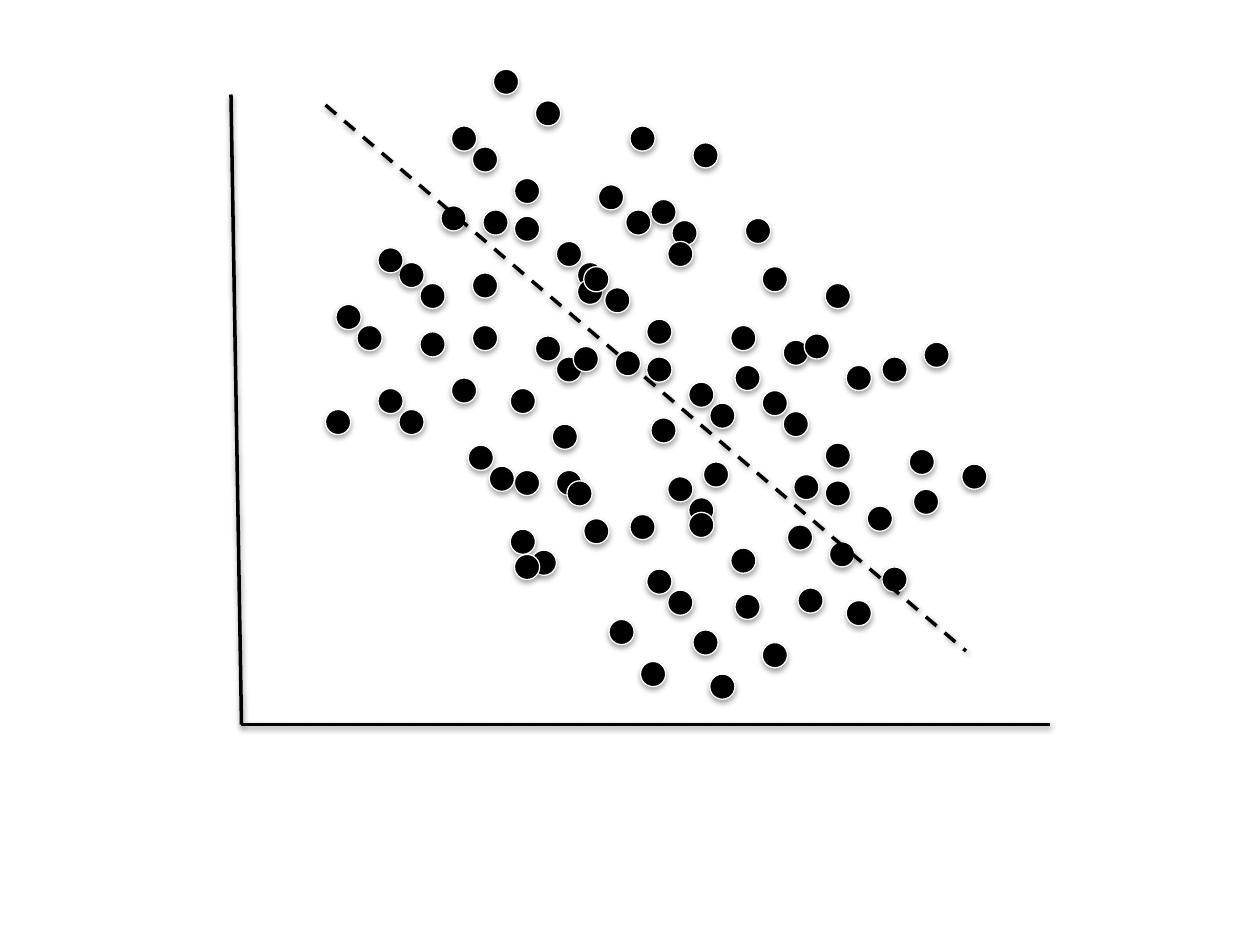
from lxml.etree import SubElement
from pptx import Presentation
from pptx.dml.color import RGBColor
from pptx.enum.dml import MSO_LINE_DASH_STYLE as Dash
from pptx.enum.shapes import MSO_CONNECTOR as Connector, MSO_SHAPE as Shape
from pptx.oxml.ns import qn
from pptx.util import Pt

# Content: lines in points, dots as left and top in grid steps
AXES = [((132, 54), (138, 414)), ((600, 414), (138, 414))]
TREND = ((186, 60), (552, 372))
GRID = 1.2  # points per step
DOT = 12 * GRID
DOTS = [
    (215, 60), (225, 130), (230, 100), (160, 145), (255, 160), (180, 185),
    (265, 115), (215, 180), (190, 125), (310, 95), (225, 70), (225, 155),
    (245, 85), (170, 155), (265, 170), (190, 195), (275, 125), (155, 195),
    (200, 135), (320, 105), (235, 33), (245, 103), (255, 48), (180, 118),
    (275, 133), (200, 158), (285, 88), (300, 60), (210, 98), (330, 68),
    (278, 127), (310, 199), (293, 167), (223, 212), (318, 227), (243, 252),
    (328, 182), (278, 247), (245, 224), (373, 162), (288, 137), (265, 224),
    (308, 152), (233, 222), (328, 237), (253, 262), (338, 192), (245, 264),
    (263, 202), (355, 104), (298, 100), (308, 170), (318, 115), (243, 185),
    (350, 174), (270, 229), (348, 155), (363, 127), (273, 165), (393, 135),
    (363, 186), (395, 258), (378, 226), (308, 271), (403, 286), (305, 315),
    (413, 241), (363, 306), (330, 300), (458, 221), (373, 196), (350, 283),
    (393, 211), (318, 281), (420, 270), (338, 321), (335, 220), (290, 295),
    (348, 261), (440, 163), (383, 159), (393, 229), (403, 174), (328, 244),
    (435, 233), (300, 245), (433, 214), (420, 170), (375, 250), (380, 280),
]
BLACK, WHITE = "000000", "FFFFFF"


def color(code):
    return RGBColor.from_string(code)


def add_shadow(item, distance, opacity):
    """Add a soft black shadow straight below a shape or line."""
    effects = SubElement(item._element.spPr, qn("a:effectLst"))
    shadow = SubElement(effects, qn("a:outerShdw"), blurRad=str(Pt(3.15)),
                        dist=str(Pt(distance)), dir="5400000", rotWithShape="0")
    black = SubElement(shadow, qn("a:srgbClr"), val=BLACK)
    SubElement(black, qn("a:alpha"), val=str(opacity * 1000))


def add_line(shapes, start, end, dash=None):
    line = shapes.add_connector(
        Connector.STRAIGHT, *(Pt(value) for value in start + end))
    line.line.color.rgb = color(BLACK)
    line.line.width = Pt(2)
    if dash:
        line.line.dash_style = dash
    add_shadow(line, 1.57, 38)


def add_dot(shapes, column, row):
    dot = shapes.add_shape(
        Shape.OVAL, Pt(column * GRID), Pt(row * GRID), Pt(DOT), Pt(DOT))
    dot.fill.solid()
    dot.fill.fore_color.rgb = color(BLACK)
    dot.line.color.rgb = color(WHITE)
    dot.line.width = Pt(0.75)
    add_shadow(dot, 1.81, 35)


def main():
    deck = Presentation()
    deck.slide_width, deck.slide_height = Pt(720), Pt(540)
    page = deck.slides.add_slide(deck.slide_layouts[6])

    # Axes
    axes = page.shapes.add_group_shape()
    for start, end in AXES:
        add_line(axes.shapes, start, end)

    # Scatter and trend line
    for column, row in DOTS:
        add_dot(page.shapes, column, row)
    add_line(page.shapes, *TREND, dash=Dash.DASH)

    deck.save("out.pptx")


if __name__ == "__main__":
    main()
